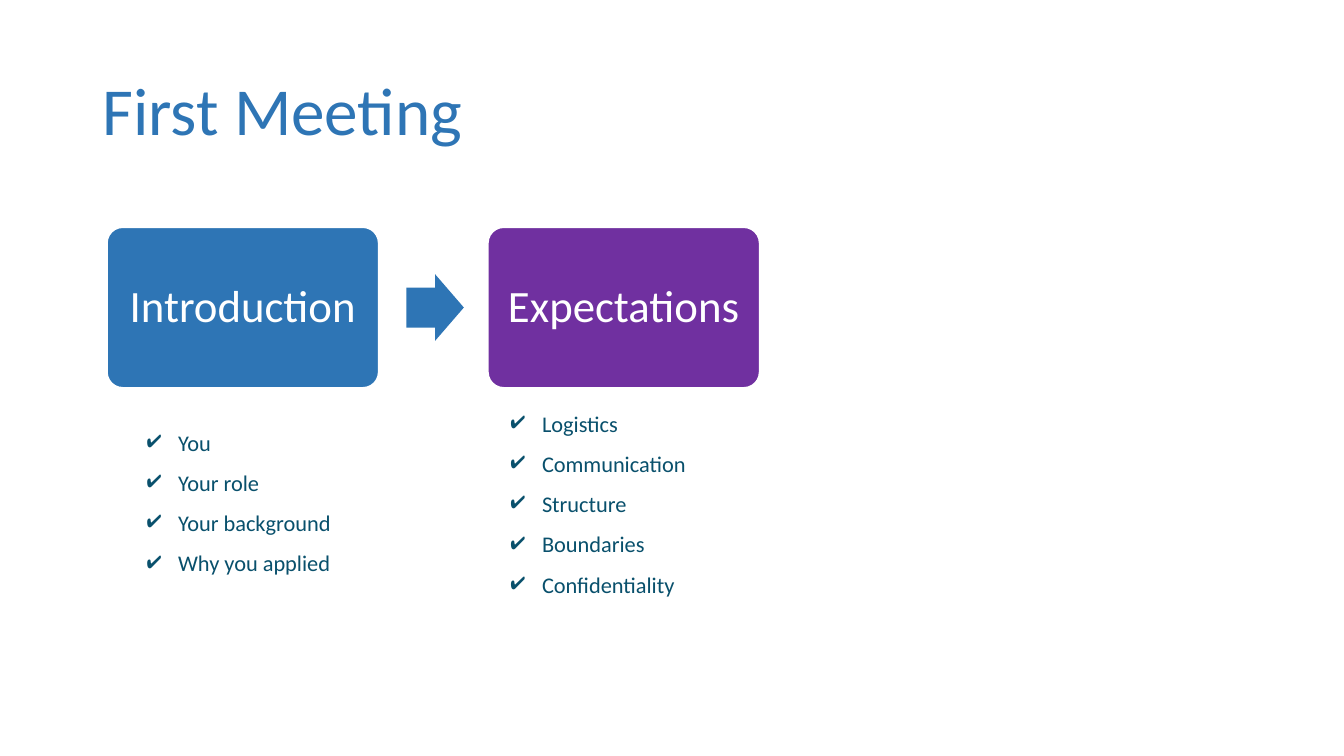
import pptx
import pptx.dml.color
import pptx.enum.shapes
import pptx.enum.text
import pptx.oxml.ns
import pptx.util
from lxml import etree

Cm = pptx.util.Cm
Pt = pptx.util.Pt
RGBColor = pptx.dml.color.RGBColor
Shape = pptx.enum.shapes.MSO_SHAPE
Anchor = pptx.enum.text.MSO_ANCHOR
Align = pptx.enum.text.PP_ALIGN
qn = pptx.oxml.ns.qn

BLUE = RGBColor(0x2E, 0x75, 0xB5)
PURPLE = RGBColor(0x70, 0x30, 0xA0)
TEAL = RGBColor(0x09, 0x50, 0x6C)
WHITE = RGBColor(0xFF, 0xFF, 0xFF)

CARD_TOP, CARD_WIDTH, CARD_HEIGHT = 5.72, 6.86, 4.06
LIST_WIDTH, LIST_HEIGHT = 5.72, 7.44
LIST_INDENT = Cm(0.79)

# Card name, colour, card left, list left, list top, list items
STEPS = [
    ("Introduction", BLUE, 2.69, 3.45, 10.34,
     ["You", "Your role", "Your background", "Why you applied"]),
    ("Expectations", PURPLE, 12.29, 12.62, 9.86,
     ["Logistics", "Communication", "Structure", "Boundaries", "Confidentiality"]),
]


def style_paragraph(para, size, color, line_spacing):
    para.line_spacing = line_spacing
    for span in para.runs:
        span.font.name = "Calibri"
        span.font.size = Pt(size)
        span.font.color.rgb = color


def add_check_bullet(para):
    """Give the paragraph a hanging indent and a check mark."""
    properties = para._p.get_or_add_pPr()
    properties.set("marL", str(LIST_INDENT))
    properties.set("indent", str(-LIST_INDENT))
    bullet_color = etree.SubElement(properties, qn("a:buClr"))
    etree.SubElement(bullet_color, qn("a:srgbClr"), val=str(TEAL))
    etree.SubElement(properties, qn("a:buChar"), char="✔")


def add_title(page, text):
    box = page.shapes.add_textbox(Cm(2.33), Cm(1.02), Cm(29.21), Cm(3.68))
    frame = box.text_frame
    frame.word_wrap = True
    frame.vertical_anchor = Anchor.MIDDLE
    frame.text = text
    style_paragraph(frame.paragraphs[0], 48, BLUE, 0.9)


def add_filled_shape(page, kind, left, top, width, height, color):
    shape = page.shapes.add_shape(kind, Cm(left), Cm(top), Cm(width), Cm(height))
    shape.shadow.inherit = False
    shape.fill.solid()
    shape.fill.fore_color.rgb = color
    shape.line.fill.background()
    return shape


def add_card(page, text, left, color):
    card = add_filled_shape(page, Shape.ROUNDED_RECTANGLE, left, CARD_TOP,
                            CARD_WIDTH, CARD_HEIGHT, color)
    card.adjustments[0] = 0.1
    card.line.color.rgb = WHITE
    card.line.width = Pt(1.5)
    frame = card.text_frame
    frame.word_wrap = True
    frame.vertical_anchor = Anchor.MIDDLE
    frame.margin_left = frame.margin_right = Cm(0.2)
    frame.text = text
    para = frame.paragraphs[0]
    para.alignment = Align.CENTER
    style_paragraph(para, 32, WHITE, 0.9)


def add_arrow(page):
    arrow = add_filled_shape(page, Shape.RIGHT_ARROW, 10.24, 6.91, 1.45, 1.68, BLUE)
    arrow.adjustments[0] = 0.6
    arrow.adjustments[1] = 0.5


def add_checklist(page, items, left, top):
    box = page.shapes.add_textbox(Cm(left), Cm(top), Cm(LIST_WIDTH), Cm(LIST_HEIGHT))
    frame = box.text_frame
    frame.word_wrap = True
    frame.text = "\n".join(items)
    for para in frame.paragraphs:
        add_check_bullet(para)
        style_paragraph(para, 16, TEAL, 1.5)


def main():
    deck = pptx.Presentation()
    deck.slide_width = Cm(33.87)
    deck.slide_height = Cm(19.05)
    page = deck.slides.add_slide(deck.slide_layouts[6])
    add_title(page, "First Meeting")
    for name, color, card_left, list_left, list_top, items in STEPS:
        add_card(page, name, card_left, color)
        add_checklist(page, items, list_left, list_top)
    add_arrow(page)
    deck.save("out.pptx")


if __name__ == "__main__":
    main()
